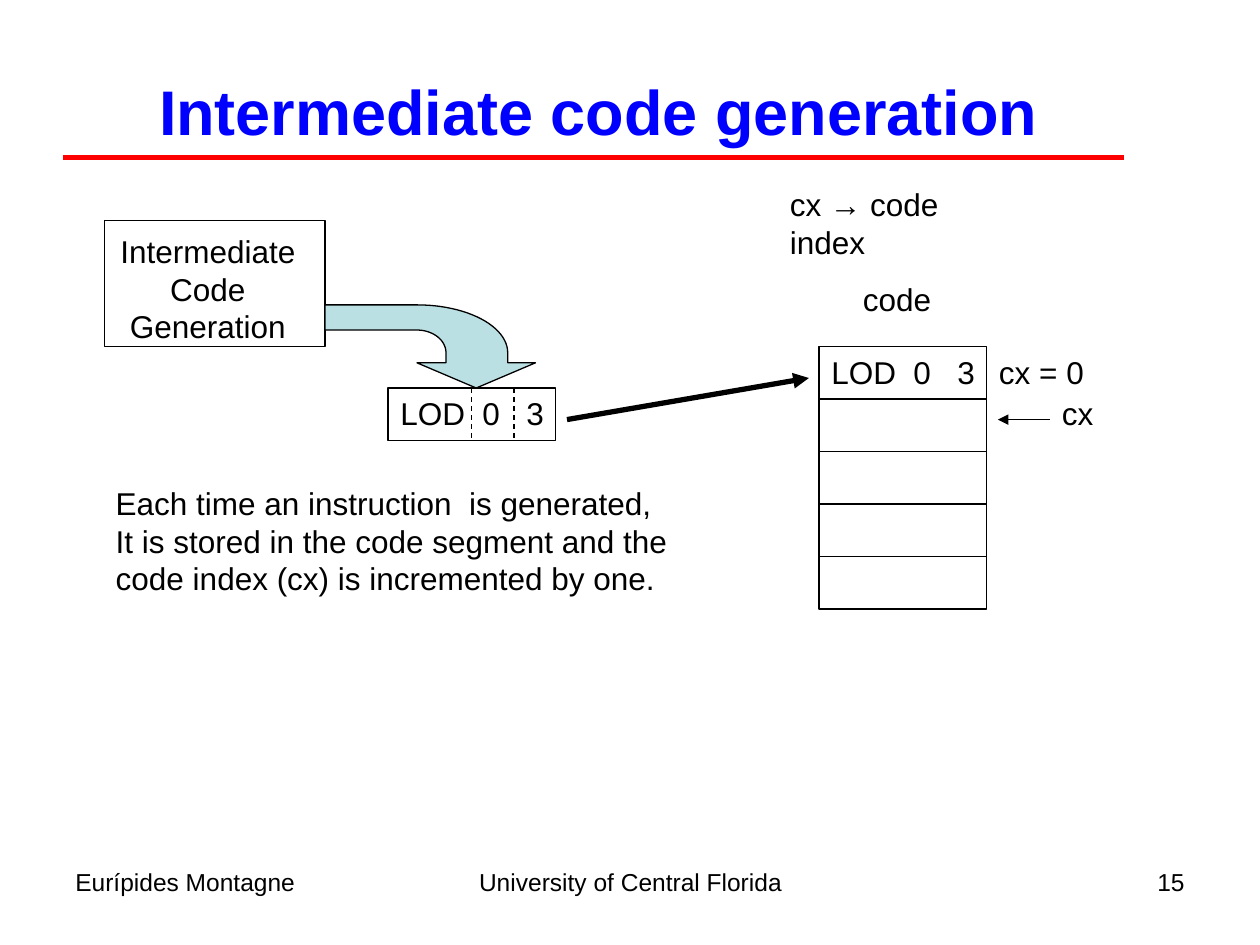
from math import cos, pi, sin

from pptx import Presentation
from pptx.dml.color import RGBColor
from pptx.enum.dml import MSO_LINE
from pptx.enum.shapes import MSO_CONNECTOR, MSO_SHAPE
from pptx.enum.text import MSO_ANCHOR, PP_ALIGN as ALIGN
from pptx.oxml.ns import qn
from pptx.util import Inches, Pt
from lxml.etree import SubElement

BLACK = RGBColor(0, 0, 0)
BLUE = RGBColor(0, 0, 0xFF)
RED = RGBColor(0xFF, 0, 0)
TEAL = RGBColor(0xBB, 0xE0, 0xE3)

CELL_W, CELL_H = 1.33, 5 / 12
CODE_X, CODE_Y = 6.5, 2.75
INSTR_X, INSTR_Y = 3.08, 3.08
FIELD_TABS = (0.65, 1.0)
INSTRUCTION = "LOD\t0\t3"


class Deck:
    font = {"name": "Arial", "size": Pt(18), "bold": False}

    def __init__(self):
        self.prs = Presentation()
        self.prs.slide_width, self.prs.slide_height = Inches(10), Inches(7.5)
        self.s = self.prs.slides.add_slide(self.prs.slide_layouts[6])

    def text(self, x, y, w, h, *lines, align=ALIGN.LEFT, color=BLACK,
             wrap=True, anchor=MSO_ANCHOR.TOP, tabs=(), **fmt):
        tf = self.s.shapes.add_textbox(*map(Inches, (x, y, w, h))).text_frame
        tf.word_wrap, tf.vertical_anchor = wrap, anchor
        for i, line in enumerate(lines):
            p = tf.add_paragraph() if i else tf.paragraphs[0]
            p.alignment = align
            r = p.add_run()
            r.text = line
            for key, value in {**self.font, **fmt}.items():
                setattr(r.font, key, value)
            r.font.color.rgb = color
            if tabs:
                tab_list = SubElement(p._p.get_or_add_pPr(), qn("a:tabLst"))
                for pos in tabs:
                    SubElement(tab_list, qn("a:tab"), pos=str(Inches(pos)), algn="l")

    def outline(self, sp, fill=None):
        sp.shadow.inherit = False
        if fill is None:
            sp.fill.background()
        else:
            sp.fill.solid()
            sp.fill.fore_color.rgb = fill
        sp.line.color.rgb = BLACK
        sp.line.width = Pt(0.75)
        return sp

    def rect(self, x, y, w, h):
        return self.outline(self.s.shapes.add_shape(
            MSO_SHAPE.RECTANGLE, *map(Inches, (x, y, w, h))))

    def polygon(self, points, fill):
        start, *rest = [(Inches(x), Inches(y)) for x, y in points]
        fb = self.s.shapes.build_freeform(*start)
        fb.add_line_segments(rest, close=True)
        return self.outline(fb.convert_to_shape(), fill)

    def line(self, x1, y1, x2, y2, color=BLACK, width=0.75, dash=None, arrow=False):
        c = self.s.shapes.add_connector(
            MSO_CONNECTOR.STRAIGHT, *map(Inches, (x1, y1, x2, y2)))
        c.line.color.rgb = color
        c.line.width = Pt(width)
        if dash:
            c.line.dash_style = dash
        if arrow:
            SubElement(c.line._get_or_add_ln(), qn("a:tailEnd"), type="triangle")
        SubElement(c._element.spPr, qn("a:effectLst"))
        return c


def quarter_arc(cx, cy, rx, ry, steps=24):
    """Points of an ellipse from its right end up to its top."""
    angles = [pi / 2 * i / steps for i in range(steps + 1)]
    return [(cx + rx * cos(a), cy - ry * sin(a)) for a in angles]


def main():
    d = Deck()

    footers = (
        (0.5, 2.33, "Eurípides Montagne", ALIGN.LEFT),
        (3.42, 3.17, "University of Central Florida", ALIGN.CENTER),
        (7.17, 2.33, "15", ALIGN.RIGHT),
    )
    for x, w, label, align in footers:
        d.text(x, 6.83, w, 0.52, label, align=align, size=Pt(14))

    d.text(0.25, 0.25, 9, 1.25, "Intermediate code generation", align=ALIGN.CENTER,
           color=BLUE, anchor=MSO_ANCHOR.MIDDLE, size=Pt(36), bold=True)
    d.line(0.5, 1.25, 8.92, 1.25, RED, 3)

    # Generator and the instruction it emits
    d.rect(0.83, 1.75, 1.75, 1)
    d.text(0.82, 1.79, 1.66, 1, "Intermediate", "Code", "Generation",
           align=ALIGN.CENTER, wrap=False)
    instruction = d.rect(INSTR_X, INSTR_Y, CELL_W, CELL_H)
    bottom = INSTR_Y + CELL_H
    divider = d.line(3.75, INSTR_Y, 3.75, bottom, dash=MSO_LINE.DASH)
    divider.begin_connect(instruction, 0)
    divider.end_connect(instruction, 2)
    d.line(4.08, INSTR_Y, 4.08, bottom, dash=MSO_LINE.DASH)
    d.text(INSTR_X, INSTR_Y, 1.34, 0.4, INSTRUCTION, tabs=FIELD_TABS)

    outer = quarter_arc(3.31, 2.8, 0.72, 0.38)
    inner = quarter_arc(3.31, 2.8, 0.23, 0.18)
    d.polygon([(3.78, 3.08), (4.25, 2.88), (4.03, 2.88), *outer, (2.58, 2.42),
               (2.58, 2.62), *reversed(inner), (3.54, 2.88), (3.31, 2.88)], TEAL)

    # Code segment
    for i in range(5):
        d.rect(CODE_X, CODE_Y + i * CELL_H, CELL_W, CELL_H)
    d.text(CODE_X, CODE_Y, 1.34, 0.4, INSTRUCTION, tabs=FIELD_TABS)
    d.text(6.75, 2.17, 0.74, 0.4, "code", wrap=False)
    d.text(6.17, 1.42, 2, 0.7, "cx → code index")
    d.text(7.83, CODE_Y, 0.88, 0.4, "cx = 0", wrap=False)
    d.text(8.33, 3.08, 0.52, 0.4, "cx", wrap=False)
    d.line(8.33, 3.33, 7.92, 3.33, arrow=True)
    d.line(4.5, 3.33, 6.42, 3, width=3, arrow=True)

    d.text(0.82, 3.79, 4.65, 1, "Each time an instruction  is generated,",
           "It is stored in the code segment and the",
           "code index (cx) is incremented by one.", wrap=False)

    d.prs.save("out.pptx")


if __name__ == "__main__":
    main()
